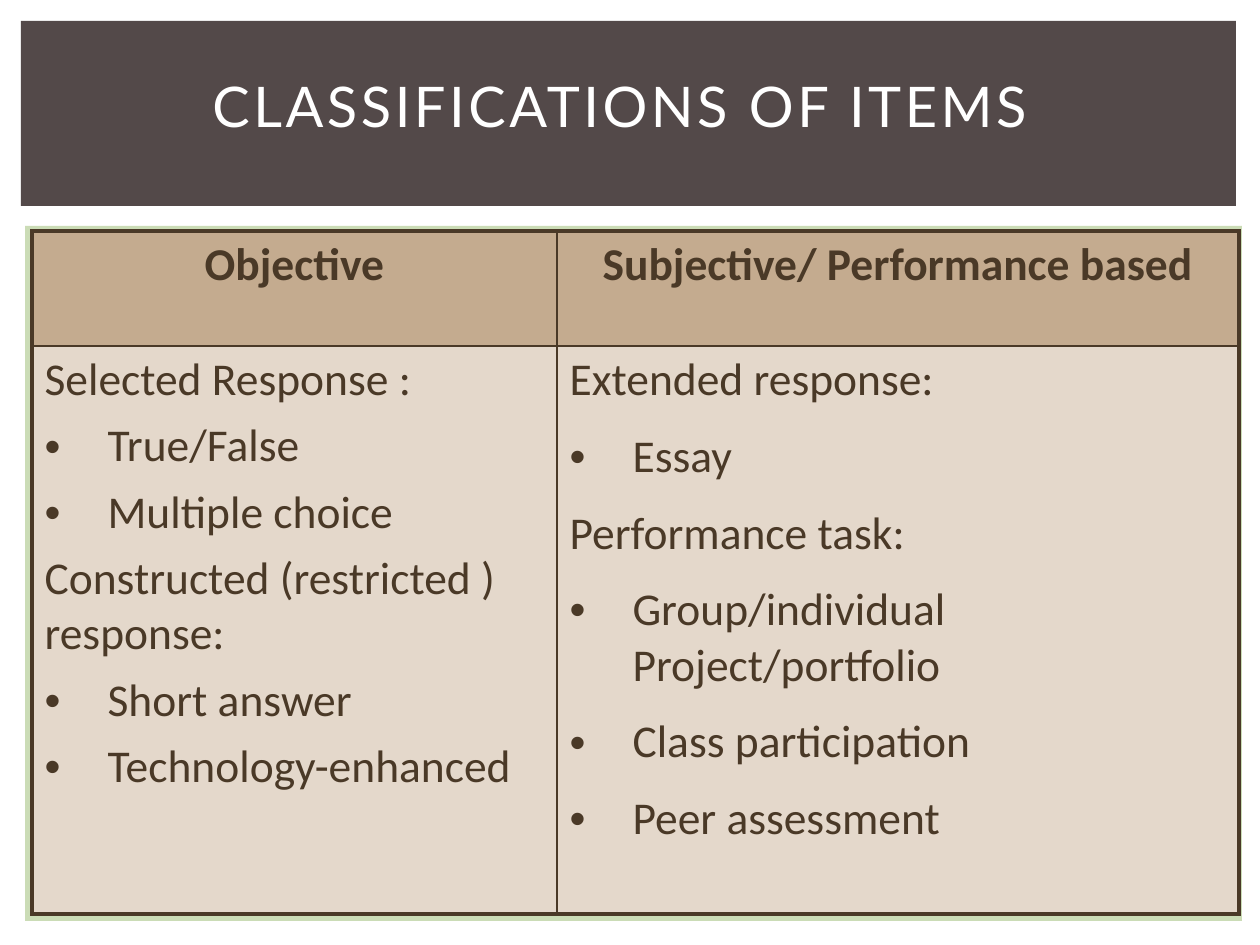
"""Build the slide on the classifications of test items."""
from lxml import etree
from pptx import Presentation
from pptx.dml.color import RGBColor
from pptx.enum import shapes, text
from pptx.oxml import ns
from pptx.util import Pt

WHITE = RGBColor(0xFF, 0xFF, 0xFF)
GREEN = RGBColor(0xCB, 0xDC, 0xB6)
SLATE = RGBColor(0x53, 0x49, 0x49)
BROWN = RGBColor(0x4A, 0x39, 0x27)
TAN = RGBColor(0xC4, 0xAB, 0x8F)
SAND = RGBColor(0xE4, 0xD8, 0xCB)

TITLE = "CLASSIFICATIONS OF ITEMS"
COLUMNS = [
    {"head": "Objective", "width": 525, "before": 6, "groups": [
        ("Selected Response :", ["True/False", "Multiple choice"]),
        ("Constructed (restricted ) response:",
         ["Short answer", "Technology-enhanced"]),
    ]},
    {"head": "Subjective/ Performance based", "width": 682, "before": 12, "groups": [
        ("Extended response:", ["Essay"]),
        ("Performance task:", ["Group/individual Project/portfolio",
                               "Class participation", "Peer assessment"]),
    ]},
]
ROW_HEIGHTS = [115, 568]
PANELS = [((25, 226, 1217, 695), GREEN), ((21, 21, 1215, 185), SLATE)]
TITLE_AREA = (53, 53, 1134, 105)
TABLE_CORNER = (32, 231)
INDENT = 63
OUTER, INNER = 2.25, 1
TITLE_FONT = {"name": "Lato", "size": Pt(32)}
HEAD_FONT = {"name": "Calibri", "size": Pt(26), "bold": True}
BODY_FONT = {**HEAD_FONT, "bold": False}


def px(*lengths):
    """Turn pixel lengths into EMU."""
    return [round(length * 914400 / 126) for length in lengths]


def write(para, wording, font, color, **layout):
    """Fill a paragraph with one formatted run."""
    for name, value in layout.items():
        setattr(para, name, value)
    span = para.add_run()
    span.text = wording
    for name, value in font.items():
        setattr(span.font, name, value)
    span.font.color.rgb = color
    return span


def add_bullet(para):
    """Give a paragraph a hanging bullet."""
    indent, = px(INDENT)
    properties = para._p.get_or_add_pPr()
    properties.set("marL", str(indent))
    properties.set("indent", str(-indent))
    etree.SubElement(properties, ns.qn("a:buFont"), typeface="Arial")
    etree.SubElement(properties, ns.qn("a:buChar"), char="•")


def add_borders(cell, row, column):
    """Draw thick lines on the table's outside and thin ones within."""
    outside = {"L": column == 0, "R": column == len(COLUMNS) - 1,
               "T": row == 0, "B": row == len(ROW_HEIGHTS) - 1}
    for side, is_outer in outside.items():
        line = etree.SubElement(cell._tc.get_or_add_tcPr(), ns.qn(f"a:ln{side}"),
                                w=str(Pt(OUTER if is_outer else INNER)))
        fill = etree.SubElement(line, ns.qn("a:solidFill"))
        etree.SubElement(fill, ns.qn("a:srgbClr"), val=str(BROWN))


def cell_lines(column):
    """List the wording and bullet flag of each body line."""
    for label, items in column["groups"]:
        yield label, False
        for item in items:
            yield item, True


def add_panel(page, area, color):
    panel = page.shapes.add_shape(shapes.MSO_SHAPE.RECTANGLE, *px(*area))
    panel.shadow.inherit = False
    panel.fill.solid()
    panel.fill.fore_color.rgb = color
    panel.line.fill.background()


def add_title(page):
    box = page.shapes.add_textbox(*px(*TITLE_AREA))
    frame = box.text_frame
    frame.word_wrap = True
    frame.vertical_anchor = text.MSO_ANCHOR.MIDDLE
    span = write(frame.paragraphs[0], TITLE, TITLE_FONT, WHITE,
                 alignment=text.PP_ALIGN.CENTER)
    span.font._element.set("spc", "200")


def add_classification_table(page):
    widths = [column["width"] for column in COLUMNS]
    frame = page.shapes.add_table(len(ROW_HEIGHTS), len(COLUMNS),
                                  *px(*TABLE_CORNER, sum(widths), sum(ROW_HEIGHTS)))
    table = frame.table
    table.first_row = table.horz_banding = False
    for row, height in zip(table.rows, px(*ROW_HEIGHTS)):
        row.height = height
    for index, column in enumerate(COLUMNS):
        table.columns[index].width, = px(column["width"])
        head, body = table.cell(0, index), table.cell(1, index)
        for row, (cell, color) in enumerate([(head, TAN), (body, SAND)]):
            add_borders(cell, row, index)
            cell.fill.solid()
            cell.fill.fore_color.rgb = color
        write(head.text_frame.paragraphs[0], column["head"], HEAD_FONT, BROWN,
              alignment=text.PP_ALIGN.CENTER, space_before=Pt(12))
        for number, (wording, bulleted) in enumerate(cell_lines(column)):
            lines = body.text_frame
            para = lines.add_paragraph() if number else lines.paragraphs[0]
            write(para, wording, BODY_FONT, BROWN, space_before=Pt(column["before"]))
            if bulleted:
                add_bullet(para)


def main():
    deck = Presentation()
    deck.slide_width, deck.slide_height = px(1260, 945)
    page = deck.slides.add_slide(deck.slide_layouts[6])
    for area, color in PANELS:
        add_panel(page, area, color)
    add_title(page)
    add_classification_table(page)
    deck.save("out.pptx")


if __name__ == "__main__":
    main()
